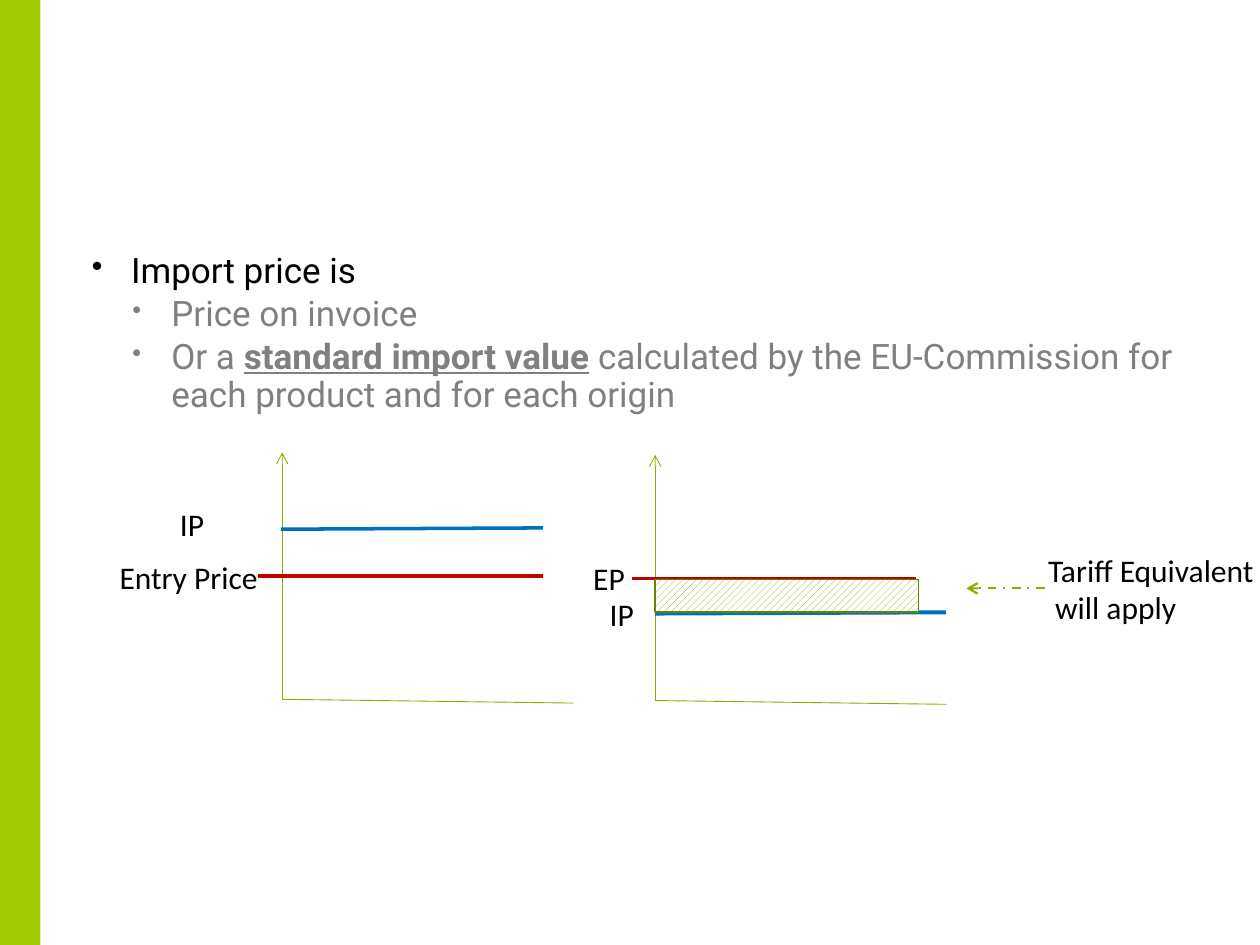
from lxml import etree
from pptx import Presentation
from pptx.dml.color import RGBColor
from pptx.enum import dml, shapes, text
from pptx.oxml import ns
from pptx.util import Inches, Pt

LIME = RGBColor(0xA3, 0xCC, 0x00)
GREEN = RGBColor(0x8B, 0xAE, 0x00)
DARK_GREEN = RGBColor(0x67, 0x81, 0x00)
RED = RGBColor(0xC0, 0x00, 0x00)
BLUE = RGBColor(0x00, 0x70, 0xC0)
BLACK = RGBColor(0x00, 0x00, 0x00)
GRAY = RGBColor(0x80, 0x80, 0x80)
WHITE = RGBColor(0xFF, 0xFF, 0xFF)


def add_line(x1, y1, x2, y2, color, width, arrow=False):
    cx = s.shapes.add_connector(shapes.MSO_CONNECTOR.STRAIGHT, Inches(x1), Inches(y1),
                                Inches(x2), Inches(y2))
    cx.line.color.rgb = color
    cx.line.width = Pt(width)
    etree.SubElement(cx._element.spPr, ns.qn("a:effectLst"))
    if arrow:
        etree.SubElement(cx.line._get_or_add_ln(), ns.qn("a:tailEnd"), type="arrow")
    return cx


def add_label(x, y, w, h, label):
    tf = s.shapes.add_textbox(Inches(x), Inches(y), Inches(w), Inches(h)).text_frame
    tf.word_wrap = False
    tf.auto_size = text.MSO_AUTO_SIZE.SHAPE_TO_FIT_TEXT
    tf.text = label
    for p in tf.paragraphs:
        for r in p.runs:
            r.font.name = "Calibri"
            r.font.size = Pt(18)
            r.font.color.rgb = BLACK


prs = Presentation()
prs.slide_width, prs.slide_height = Inches(10), Inches(7.5)
s = prs.slides.add_slide(prs.slide_layouts[6])

bar = s.shapes.add_shape(shapes.MSO_SHAPE.RECTANGLE, 0, 0, Inches(0.32), Inches(7.5))
bar.shadow.inherit = False
bar.fill.solid()
bar.fill.fore_color.rgb = LIME
bar.line.fill.background()

# Bulleted text: indent, bullet size, colour, runs as (wording, emphasised)
bullets = [
    (0.31, 90, BLACK, [("Import price is", False)]),
    (0.63, 75, GRAY, [("Price on invoice", False)]),
    (0.63, 75, GRAY, [("Or a ", False), ("standard import value", True),
                      (" calculated by the EU-Commission for each product and for each origin",
                       False)]),
]
tf = s.shapes.add_textbox(Inches(0.73), Inches(2.01), Inches(8.95), Inches(3.9)).text_frame
tf.word_wrap = True
tf.margin_left = tf.margin_top = tf.margin_right = tf.margin_bottom = 0
for i, (indent, bullet_size, color, runs) in enumerate(bullets):
    p = tf.paragraphs[0] if i == 0 else tf.add_paragraph()
    p.level = min(i, 1)
    pPr = p._p.get_or_add_pPr()
    pPr.set("marL", str(Inches(indent)))
    pPr.set("indent", str(-Inches(0.31)))
    etree.SubElement(pPr, ns.qn("a:buSzPct"), val=str(bullet_size * 1000))
    etree.SubElement(pPr, ns.qn("a:buChar"), char="•")
    p.line_spacing = 0.9
    if i:
        p.space_before = Pt(3)
    for wording, emphasised in runs:
        r = p.add_run()
        r.text = wording
        r.font.name = "Roboto"
        r.font.size = Pt(20)
        r.font.color.rgb = color
        if emphasised:
            r.font.bold = r.font.underline = True

# Axes of both price diagrams
for x, base, top in [(2.24, 5.55, 3.59), (5.2, 5.56, 3.61)]:
    add_line(x, base, x + 2.31, base + 0.03, GREEN, 0.5)
    add_line(x, base, x, top, GREEN, 0.5, arrow=True)

# Price levels
add_line(2.05, 4.57, 4.31, 4.57, RED, 2)
add_line(2.23, 4.2, 4.31, 4.19, BLUE, 2)
add_line(5.2, 4.87, 7.51, 4.86, BLUE, 2.25)
add_line(5.02, 4.59, 7.27, 4.59, RED, 2)

add_label(0.85, 4.38, 1.31, 0.4, "Entry Price")
add_label(1.33, 3.96, 0.39, 0.4, "IP")
add_label(4.61, 4.39, 0.45, 0.4, "EP")
add_label(4.74, 4.67, 0.39, 0.4, "IP")

# Tariff equivalent: gap between entry price and import price
pointer = add_line(8.29, 4.67, 7.67, 4.67, GREEN, 1.25, arrow=True)
pointer.line.dash_style = dml.MSO_LINE.DASH_DOT
add_label(8.22, 4.32, 1.85, 0.71, "Tariff Equivalent\n will apply")

gap = s.shapes.add_shape(shapes.MSO_SHAPE.RECTANGLE, Inches(5.2), Inches(4.6),
                         Inches(2.09), Inches(0.26))
gap.shadow.inherit = False
gap.fill.patterned()
gap.fill.pattern = dml.MSO_PATTERN.WIDE_UPWARD_DIAGONAL
gap.fill.fore_color.rgb = GREEN
gap.fill.back_color.rgb = WHITE
gap.line.color.rgb = DARK_GREEN
gap.line.width = Pt(1)

prs.save("out.pptx")
